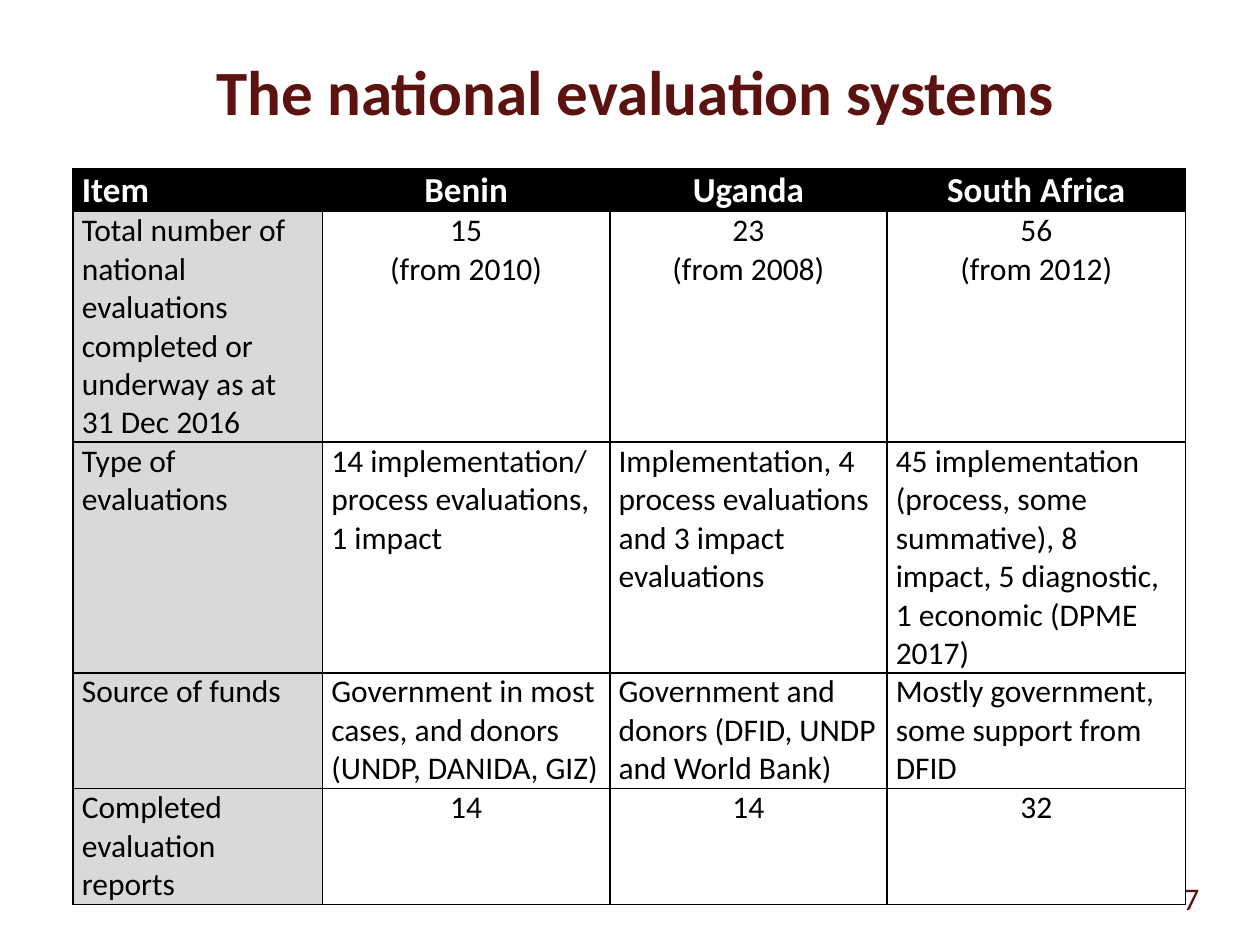
from lxml.etree import SubElement
from pptx import Presentation
from pptx.dml.color import RGBColor
from pptx.enum.text import MSO_ANCHOR, PP_ALIGN
from pptx.oxml.ns import qn
from pptx.util import Inches, Pt

MAROON = RGBColor(0x5C, 0x12, 0x0E)
BLACK = RGBColor(0, 0, 0)
WHITE = RGBColor(0xFF, 0xFF, 0xFF)
GREY = RGBColor(0xD9, 0xD9, 0xD9)
FONT = "Calibri"

TITLE = "The national evaluation systems"
PAGE_NUMBER = "7"
HEADER = ("Item", "Benin", "Uganda", "South Africa")
# Row height, whether the country cells are centred, cell texts
ROWS = [
    (0.34, True, HEADER),
    (1.83, True, (
        "Total number of national evaluations completed or underway as at 31 Dec 2016",
        "15\n(from 2010)", "23\n(from 2008)", "56\n(from 2012)")),
    (1.83, False, (
        "Type of evaluations",
        "14 implementation/ process evaluations, 1 impact",
        "Implementation, 4 process evaluations and 3 impact evaluations",
        "45 implementation (process, some summative), 8 impact, 5 diagnostic, "
        "1 economic (DPME 2017)")),
    (0.92, False, (
        "Source of funds",
        "Government in most cases, and donors (UNDP, DANIDA, GIZ)",
        "Government and donors (DFID, UNDP and World Bank)",
        "Mostly government, some support from DFID")),
    (0.92, True, ("Completed evaluation reports", "14", "14", "32")),
]
COLUMN_WIDTHS = (1.98, 2.28, 2.2, 2.37)


def write(frame, text, size, color, bold=False, align=PP_ALIGN.CENTER):
    frame.text = text
    frame.word_wrap = True
    for paragraph in frame.paragraphs:
        paragraph.alignment = align
        for run in paragraph.runs:
            run.font.name = FONT
            run.font.size = Pt(size)
            run.font.bold = bold
            run.font.color.rgb = color


def add_borders(cell):
    properties = cell._tc.get_or_add_tcPr()
    for position, side in enumerate(("a:lnL", "a:lnR", "a:lnT", "a:lnB")):
        line = SubElement(properties, qn(side), w=str(Pt(1)))
        fill = SubElement(line, qn("a:solidFill"))
        SubElement(fill, qn("a:srgbClr"), val=str(BLACK))
        properties.insert(position, line)


def add_evaluation_table(slide):
    table = slide.shapes.add_table(
        len(ROWS), len(HEADER), Inches(0.58), Inches(1.34),
        Inches(sum(COLUMN_WIDTHS)), Inches(sum(row[0] for row in ROWS))).table
    for column, width in zip(table.columns, COLUMN_WIDTHS):
        column.width = Inches(width)
    for r, (height, centred, texts) in enumerate(ROWS):
        table.rows[r].height = Inches(height)
        is_header = r == 0
        for c, text in enumerate(texts):
            cell = table.cell(r, c)
            cell.margin_left = cell.margin_right = Inches(0.07)
            cell.margin_top = cell.margin_bottom = 0
            cell.fill.solid()
            cell.fill.fore_color.rgb = BLACK if is_header else GREY if c == 0 else WHITE
            add_borders(cell)
            write(cell.text_frame, text, 20 if is_header else 18,
                  WHITE if is_header else BLACK, is_header,
                  PP_ALIGN.CENTER if centred and c else PP_ALIGN.LEFT)


def main():
    deck = Presentation()
    deck.slide_width, deck.slide_height = Inches(10), Inches(7.5)
    slide = deck.slides.add_slide(deck.slide_layouts[5])

    title = slide.shapes.title
    title.left, title.top = Inches(0.28), Inches(0.2)
    title.width, title.height = Inches(9.53), Inches(1.03)
    title.text_frame.vertical_anchor = MSO_ANCHOR.MIDDLE
    write(title.text_frame, TITLE, 36, MAROON, bold=True)

    page = slide.shapes.add_textbox(Inches(9.08), Inches(6.91), Inches(0.75), Inches(0.44))
    page.text_frame.vertical_anchor = MSO_ANCHOR.MIDDLE
    write(page.text_frame, PAGE_NUMBER, 18, MAROON)

    add_evaluation_table(slide)
    deck.save("out.pptx")


if __name__ == "__main__":
    main()
